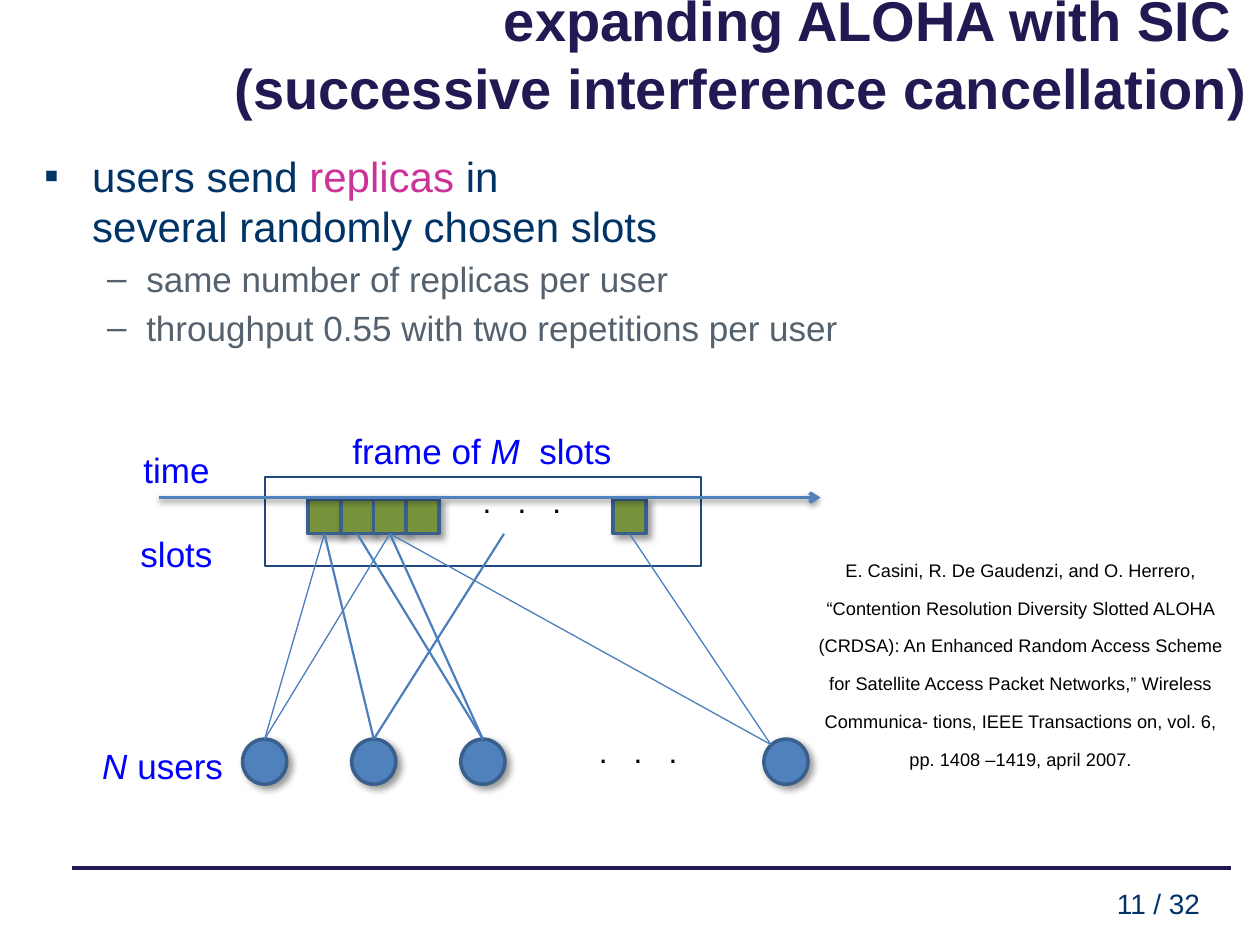
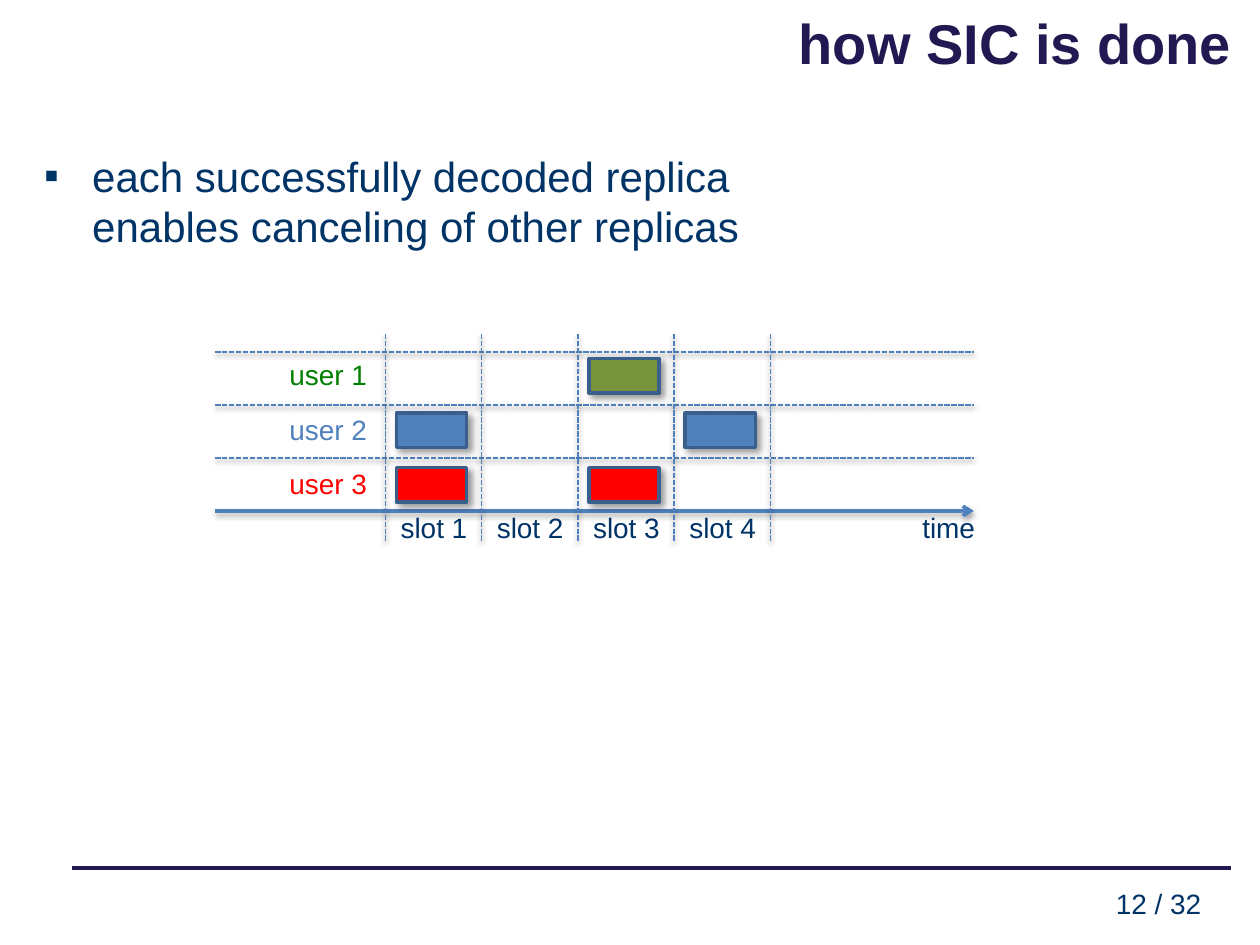
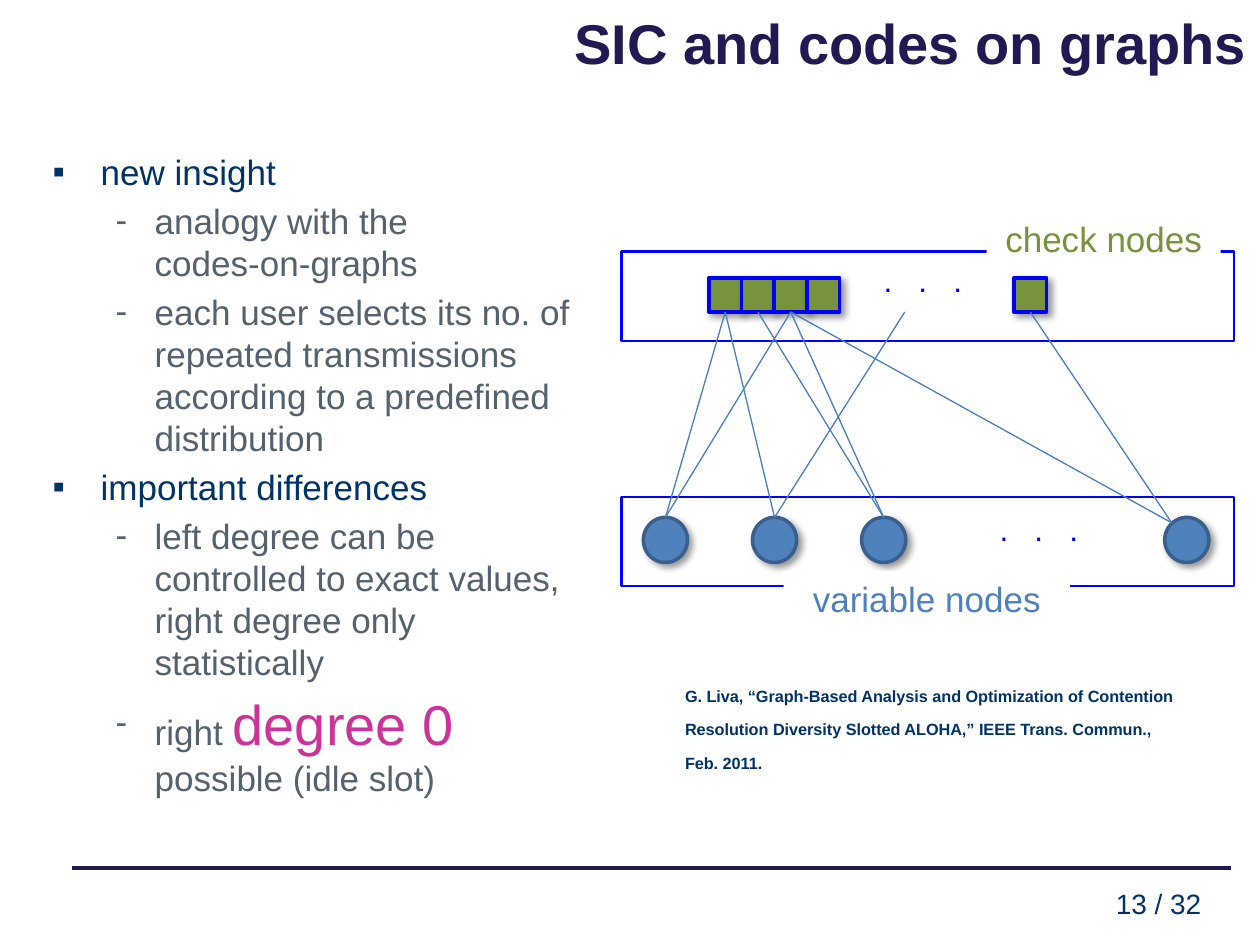
from lxml import etree
from pptx import Presentation
from pptx import util as u
from pptx.dml.color import RGBColor
from pptx.enum import dml, shapes, text
from pptx.oxml import ns

NAVY = RGBColor(0x21, 0x1A, 0x52)
DEEP_BLUE = RGBColor(0x00, 0x33, 0x66)
SLATE = RGBColor(0x54, 0x61, 0x6E)
MAGENTA = RGBColor(0xCC, 0x33, 0x99)
BLUE = RGBColor(0x00, 0x00, 0xFF)
STEEL = RGBColor(0x4F, 0x81, 0xBD)
EDGE_BLUE = RGBColor(0x4B, 0x7E, 0xBC)
OUTLINE = RGBColor(0x3A, 0x5F, 0x8C)
FRAME_BLUE = RGBColor(0x1F, 0x49, 0x7D)
OLIVE = RGBColor(0x77, 0x93, 0x3C)
GREEN = RGBColor(0x00, 0x80, 0x00)
RED = RGBColor(0xFF, 0x00, 0x00)
BLACK = RGBColor(0x00, 0x00, 0x00)
WHITE = RGBColor(0xFF, 0xFF, 0xFF)

RECTANGLE = shapes.MSO_SHAPE.RECTANGLE
OVAL = shapes.MSO_SHAPE.OVAL
LEFT, CENTER, RIGHT = text.PP_ALIGN.LEFT, text.PP_ALIGN.CENTER, text.PP_ALIGN.RIGHT

BLOCK_SHADOW = {"blurRad": 50800, "dist": 38100, "dir": 2700000, "alpha": 40000}
LINE_SHADOW = {"blurRad": 39370, "dist": 20320, "dir": 5400000, "alpha": 38000}

BASE = {"name": "Arial", "size": u.Pt(20), "color": BLUE}
TITLE = BASE | {"size": u.Pt(32), "color": NAVY, "bold": True}
SMALL = BASE | {"size": u.Pt(16), "color": DEEP_BLUE}
DOTS = BASE | {"size": u.Pt(18), "spc": 500}
LEVELS = {
    0: {"margin": 0.97, "hanging": 0.97, "color": DEEP_BLUE},
    1: {"margin": 2.06, "hanging": 0.79, "color": SLATE},
}
SLIDE_TOTAL = 32


def style_run(run, style):
    for name, value in style.items():
        if name == "color":
            run.font.color.rgb = value
        elif name in ("baseline", "spc"):
            run._r.get_or_add_rPr().set(name, str(value))
        else:
            setattr(run.font, name, value)


def write_runs(paragraph, runs, style):
    if isinstance(runs, str):
        runs = [(runs, {})]
    for content, changes in runs:
        for index, line in enumerate(content.split("\n")):
            if index:
                paragraph.add_line_break()
            run = paragraph.add_run()
            run.text = line
            style_run(run, style | changes)


def add_text(slide, box, runs, style=BASE, align=CENTER, wrap=False):
    shape = slide.shapes.add_textbox(*map(u.Cm, box))
    frame = shape.text_frame
    settings = {"word_wrap": wrap, "auto_size": text.MSO_AUTO_SIZE.SHAPE_TO_FIT_TEXT}
    for name, value in settings.items():
        setattr(frame, name, value)
    paragraph = frame.paragraphs[0]
    paragraph.alignment = align
    write_runs(paragraph, runs, style)
    return shape


def set_effects(shape, shadow):
    effects = etree.SubElement(shape._element.spPr, ns.qn("a:effectLst"))
    if shadow:
        outer = etree.SubElement(effects, ns.qn("a:outerShdw"), rotWithShape="0")
        for name in ("blurRad", "dist", "dir"):
            outer.set(name, str(shadow[name]))
        color = etree.SubElement(outer, ns.qn("a:srgbClr"), val="000000")
        etree.SubElement(color, ns.qn("a:alpha"), val=str(shadow["alpha"]))


def add_block(slide, kind, box, fill=None, outline=OUTLINE, width=2, shadow=BLOCK_SHADOW):
    shape = slide.shapes.add_shape(kind, *map(u.Cm, box))
    if fill is None:
        shape.fill.background()
    else:
        shape.fill.solid()
        shape.fill.fore_color.rgb = fill
    shape.line.color.rgb = outline
    shape.line.width = u.Pt(width)
    set_effects(shape, shadow)
    return shape


def add_frame(slide, box, outline):
    return add_block(slide, RECTANGLE, box, None, outline, 1.25, None)


def add_line(slide, start, end, color, width, dash=None, arrow=False, shadow=None):
    line = slide.shapes.add_connector(
        shapes.MSO_CONNECTOR.STRAIGHT, *map(u.Cm, (*start, *end)))
    line.line.color.rgb = color
    line.line.width = u.Pt(width)
    if dash:
        line.line.dash_style = dash
    if arrow:
        etree.SubElement(line.line._get_or_add_ln(), ns.qn("a:tailEnd"), type="arrow")
    set_effects(line, shadow)
    return line


def add_time_arrow(slide, start, end):
    add_line(slide, start, end, STEEL, 2, arrow=True, shadow=LINE_SHADOW)


def add_bullets(slide, box, items, size, sub_bullet):
    shape = slide.shapes.add_textbox(*map(u.Cm, box))
    frame = shape.text_frame
    frame.word_wrap = True
    for index, (level, runs) in enumerate(items):
        paragraph = frame.paragraphs[0] if index == 0 else frame.add_paragraph()
        look = LEVELS[level]
        properties = paragraph._p.get_or_add_pPr()
        properties.set("marL", str(u.Cm(look["margin"])))
        properties.set("indent", str(-u.Cm(look["hanging"])))
        etree.SubElement(properties, ns.qn("a:buFont"), typeface="Arial")
        etree.SubElement(properties, ns.qn("a:buChar"), char=sub_bullet if level else "▪")
        paragraph.level = level
        if index:
            paragraph.space_before = u.Pt(4)
        points = 20 if level else size
        write_runs(paragraph, runs, BASE | {"size": u.Pt(points), "color": look["color"]})


def add_slide(presentation, title, number, title_top=0):
    slide = presentation.slides.add_slide(presentation.slide_layouts[5])
    heading = slide.shapes.title
    box = {"left": 0, "top": title_top, "width": 25.4, "height": 1.68}
    for name, value in box.items():
        setattr(heading, name, u.Cm(value))
    frame = heading.text_frame
    settings = {"vertical_anchor": text.MSO_ANCHOR.MIDDLE, "word_wrap": True,
                "auto_size": text.MSO_AUTO_SIZE.NONE}
    for name, value in settings.items():
        setattr(frame, name, value)
    frame.paragraphs[0].alignment = RIGHT
    write_runs(frame.paragraphs[0], title, TITLE)
    add_line(slide, (1.45, 17.5), (24.82, 17.5), NAVY, 2.25)
    add_text(slide, (22.2, 17.75, 2.31, 0.94), f"{number} / {SLIDE_TOTAL}", SMALL)
    return slide


def add_graph(slide, left, top, slot_outline, dots_color, edge_widths):
    slot_width, slot_height, user_width, user_height = 0.66, 0.69, 0.89, 0.91
    user_top = top + 4.83
    slot_lefts = [left + slot_width * index for index in range(4)] + [left + 6.15]
    user_lefts = [left - 1.32 + 2.2 * index for index in range(3)] + [left + 9.19]

    users = [add_block(slide, OVAL, (x, user_top, user_width, user_height), STEEL)
             for x in user_lefts]
    slots = [add_block(slide, RECTANGLE, (x, top, slot_width, slot_height), OLIVE, slot_outline)
             for x in slot_lefts]
    for dx, dy in ((3.26, -0.47), (5.6, 4.56)):
        add_text(slide, (left + dx, top + dy, 2.11, 1.02), ". . .", DOTS | {"color": dots_color})

    user_points = [(x + user_width / 2, user_top) for x in user_lefts[:3]]
    user_points.append((left + 9.33, top + 4.94))
    slot_points = [(x + slot_width / 2, top + slot_height) for x in slot_lefts]
    hidden_slot = len(slots)
    slot_points.append((left + 3.95, top + slot_height))

    edges = [(0, 0), (1, 0), (2, 2), (3, 4), (0, 2), (1, hidden_slot), (2, 1), (3, 2)]
    for user, slot in edges:
        edge = add_line(slide, user_points[user], slot_points[slot], EDGE_BLUE, edge_widths[user])
        if user < 3:
            edge.begin_connect(users[user], 0)
        if slot < hidden_slot:
            edge.end_connect(slots[slot], 2)


def add_node_label(slide, box, label, color):
    shape = add_text(slide, box, label, BASE | {"color": color}, wrap=True)
    shape.fill.solid()
    shape.fill.fore_color.rgb = WHITE


def build_aloha_slide(presentation):
    slide = add_slide(
        presentation, "expanding ALOHA with SIC \n(successive interference cancellation)", 11, 0.23)
    add_bullets(slide, (0.64, 2.9, 24.28, 14.12), [
        (0, [("users send ", {}), ("replicas ", {"color": MAGENTA}),
             ("in \nseveral randomly chosen slots", {})]),
        (1, "same number of replicas per user"),
        (1, "throughput 0.55 with two repetitions per user"),
    ], 24, "–")
    add_text(slide, (6.83, 8.53, 5.77, 1.12),
             [("frame of ", {}), ("M ", {"italic": True}), (" slots", {})])
    add_frame(slide, (5.35, 9.61, 8.79, 1.8), FRAME_BLUE)
    add_graph(slide, 6.21, 10.07, OUTLINE, BLACK, (0.75, 1.25, 1.25, 0.75))
    add_time_arrow(slide, (3.2, 10.03), (16.54, 10.03))

    axis = add_text(slide, (2.57, 8.92, 1.98, 1.96), "time")
    slots_label = axis.text_frame.add_paragraph()
    slots_label.alignment = CENTER
    slots_label.space_before = u.Pt(24)
    write_runs(slots_label, "slots", BASE)

    add_text(slide, (1.78, 14.88, 3, 1.12), [("N", {"italic": True}), (" users", {})])
    add_text(slide, (16.13, 11.07, 8.89, 3.84),
             "E. Casini, R. De Gaudenzi, and O. Herrero, “Contention Resolution Diversity "
             "Slotted ALOHA (CRDSA): An Enhanced Random Access Scheme for Satellite Access "
             "Packet Networks,” Wireless Communica- tions, IEEE Transactions on, vol. 6, "
             "pp. 1408 –1419, april 2007.",
             BASE | {"size": u.Pt(18), "color": BLACK, "baseline": 30000}, wrap=True)


def build_sic_slide(presentation):
    slide = add_slide(presentation, "how SIC is done ", 12)
    add_bullets(slide, (0.64, 2.9, 24.28, 14.12), [
        (0, "each successfully decoded replica \nenables canceling of other replicas"),
    ], 24, "–")

    grid_left, grid_right, grid_top = 4.34, 19.63, 7.09
    slot_left, slot_pitch, line_pitch, row_pitch = 7.77, 1.94, 1.07, 1.1
    dashed = {"color": STEEL, "width": 1, "dash": dml.MSO_LINE.SQUARE_DOT, "shadow": LINE_SHADOW}
    axis_y = grid_top + 3 * line_pitch
    add_time_arrow(slide, (grid_left, axis_y), (grid_right, axis_y))
    for row in range(3):
        y = grid_top + line_pitch * row
        add_line(slide, (grid_left, y), (grid_right, y), **dashed)
    for border in range(5):
        x = slot_left + slot_pitch * border
        add_line(slide, (x, 10.9), (x, 6.71), **dashed)

    add_text(slide, (18.34, 10.16, 1.57, 0.94), "time", SMALL)
    for slot in range(4):
        add_text(slide, (slot_left + 0.04 + slot_pitch * slot, 10.16, 1.88, 0.94),
                 f"slot {slot + 1}", SMALL)

    users = [(GREEN, OLIVE, (2,)), (STEEL, STEEL, (0, 3)), (RED, RED, (0, 2))]
    for row, (label_color, packet_color, used_slots) in enumerate(users):
        y = grid_top + row_pitch * row
        add_text(slide, (5.56, y, 2.11, 0.94), f"user {row + 1}", SMALL | {"color": label_color})
        for slot in used_slots:
            add_block(slide, RECTANGLE,
                      (slot_left + 0.22 + slot_pitch * slot, y + 0.14, 1.42, 0.69), packet_color)


def build_codes_slide(presentation):
    slide = add_slide(presentation, "SIC and codes on graphs", 13)
    add_bullets(slide, (0.81, 2.9, 11.43, 11.43), [
        (0, "new insight"),
        (1, "analogy with the \ncodes-on-graphs"),
        (1, "each user selects its no. of repeated transmissions according to a "
            "predefined distribution"),
        (0, "important differences"),
        (1, "left degree can be controlled to exact values, \nright degree only statistically"),
        (1, [("right ", {}), ("degree 0 ", {"size": u.Pt(32), "color": MAGENTA}),
             ("possible (idle slot)", {})]),
    ], 20, "-")
    for top in (5.07, 10.02):
        add_frame(slide, (12.53, top, 12.34, 1.8), BLUE)
    add_graph(slide, 14.29, 5.6, BLUE, BLUE, (0.75,) * 4)
    add_node_label(slide, (19.89, 4.27, 4.72, 1.12), "check nodes", OLIVE)
    add_node_label(slide, (15.8, 11.51, 5.77, 1.12), "variable nodes", STEEL)
    add_text(slide, (13.56, 13.64, 10.36, 1.63),
             "G. Liva, “Graph-Based Analysis and Optimization of Contention Resolution "
             "Diversity Slotted ALOHA,” IEEE Trans. Commun., Feb. 2011.",
             SMALL | {"bold": True, "baseline": 30000}, LEFT, wrap=True)


def main():
    presentation = Presentation()
    presentation.slide_width = u.Cm(25.4)
    presentation.slide_height = u.Cm(19.05)
    build_aloha_slide(presentation)
    build_sic_slide(presentation)
    build_codes_slide(presentation)
    presentation.save("out.pptx")


if __name__ == "__main__":
    main()
